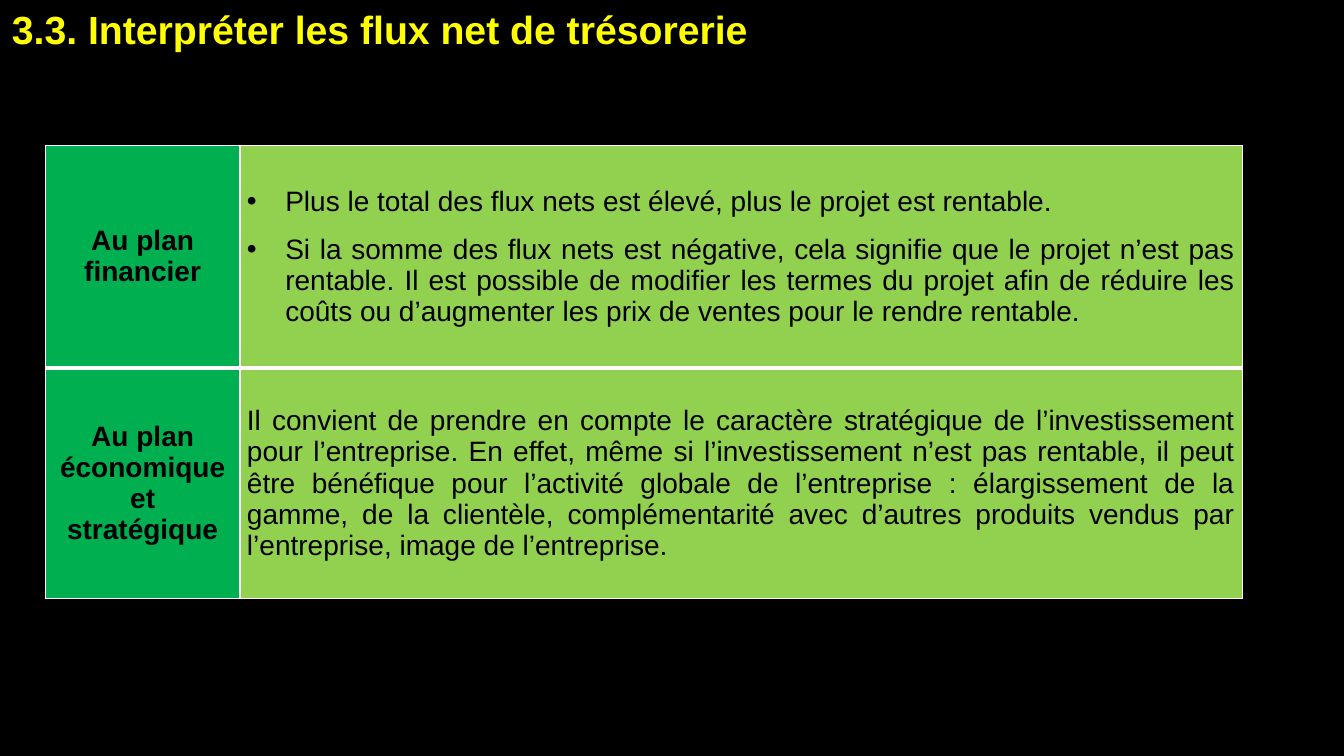
from pptx import Presentation
from pptx.dml.color import RGBColor
from pptx.enum.text import MSO_ANCHOR as Anchor, MSO_AUTO_SIZE as Fit, PP_ALIGN as Align
from pptx.oxml.ns import qn
from pptx.util import Inches, Pt
from lxml.etree import SubElement as Sub


def color(code):
    return RGBColor.from_string(code)


class Deck:
    font = "Arial"
    black, white, yellow = "000000", "FFFFFF", "FFFF00"
    dark, light = "00B050", "92D050"

    def __init__(self):
        self.prs = Presentation()
        self.prs.slide_width, self.prs.slide_height = Inches(13.33), Inches(7.5)
        self.slide = self.prs.slides.add_slide(self.prs.slide_layouts[6])
        fill = self.slide.background.fill
        fill.solid()
        fill.fore_color.rgb = color(self.black)

    def text(self, par, words, size, ink, bold=False, **form):
        for key, value in form.items():
            setattr(par, key, value)
        run = par.add_run()
        run.text = words
        for key, value in {"name": self.font, "size": Pt(size), "bold": bold}.items():
            setattr(run.font, key, value)
        run.font.color.rgb = color(ink)

    def title(self, words, box):
        frame = self.slide.shapes.add_textbox(*map(Inches, box)).text_frame
        frame.word_wrap = True
        frame.auto_size = Fit.SHAPE_TO_FIT_TEXT
        self.text(frame.paragraphs[0], words, 28, self.yellow, bold=True)

    def bullet(self, par):
        props = par._p.get_or_add_pPr()
        props.set("marL", str(Inches(0.38)))
        props.set("indent", str(-Inches(0.38)))
        Sub(props, qn("a:buFont"), typeface=self.font)
        Sub(props, qn("a:buChar"), char="•")

    def border(self, cell, widths):
        props = cell._tc.get_or_add_tcPr()
        for side, width in widths.items():
            line = Sub(props, qn(f"a:ln{side}"), w=str(Pt(width)))
            fill = Sub(line, qn("a:solidFill"))
            Sub(fill, qn("a:srgbClr"), val=self.white)

    def cell(self, cell, texts, head, widths):
        form = {"margin_left": Inches(0.07), "margin_right": Inches(0.07),
                "margin_top": 0, "margin_bottom": 0, "vertical_anchor": Anchor.MIDDLE}
        for key, value in form.items():
            setattr(cell, key, value)
        self.border(cell, widths)
        cell.fill.solid()
        cell.fill.fore_color.rgb = color(self.dark if head else self.light)
        frame = cell.text_frame
        for i, words in enumerate(texts):
            par = frame.add_paragraph() if i else frame.paragraphs[0]
            self.text(par, words, 20, self.black, bold=head,
                      alignment=Align.CENTER if head else Align.JUSTIFY,
                      space_before=Pt(0 if head else 6), space_after=Pt(6))
            if len(texts) > 1:
                self.bullet(par)

    def table(self, rows, left, top, wide, high):
        shape = self.slide.shapes.add_table(len(rows), len(wide), Inches(left), Inches(top),
                                            Inches(sum(wide)), Inches(sum(high)))
        grid = shape.table
        grid.first_row = grid.horz_banding = False
        for col, width in zip(grid.columns, wide):
            col.width = Inches(width)
        for r, (row, height) in enumerate(zip(rows, high)):
            grid.rows[r].height = Inches(height)
            # Thick rule between rows, thin lines elsewhere
            widths = {"L": 1, "R": 1, "T": 3 if r else 1, "B": 3 if r < len(rows) - 1 else 1}
            for c, texts in enumerate(row):
                self.cell(grid.cell(r, c), texts, c == 0, widths)


def main():
    deck = Deck()

    # Heading
    deck.title("3.3. Interpréter les flux net de trésorerie", (0.02, 0, 12.67, 0.57))

    # Two points of view: label and comments
    views = [
        (["Au plan financier"],
         ["Plus le total des flux nets est élevé, plus le projet est rentable.",
          "Si la somme des flux nets est négative, cela signifie que le projet n’est pas "
          "rentable. Il est possible de modifier les termes du projet afin de réduire les "
          "coûts ou d’augmenter les prix de ventes pour le rendre rentable."]),
        (["Au plan économique et stratégique"],
         ["Il convient de prendre en compte le caractère stratégique de l’investissement "
          "pour l’entreprise. En effet, même si l’investissement n’est pas rentable, il peut "
          "être bénéfique pour l’activité globale de l’entreprise : élargissement de la "
          "gamme, de la clientèle, complémentarité avec d’autres produits vendus par "
          "l’entreprise, image de l’entreprise."]),
    ]
    deck.table(views, 0.45, 1.44, wide=(1.93, 9.94), high=(2.21, 2.29))

    deck.prs.save("out.pptx")


if __name__ == "__main__":
    main()
